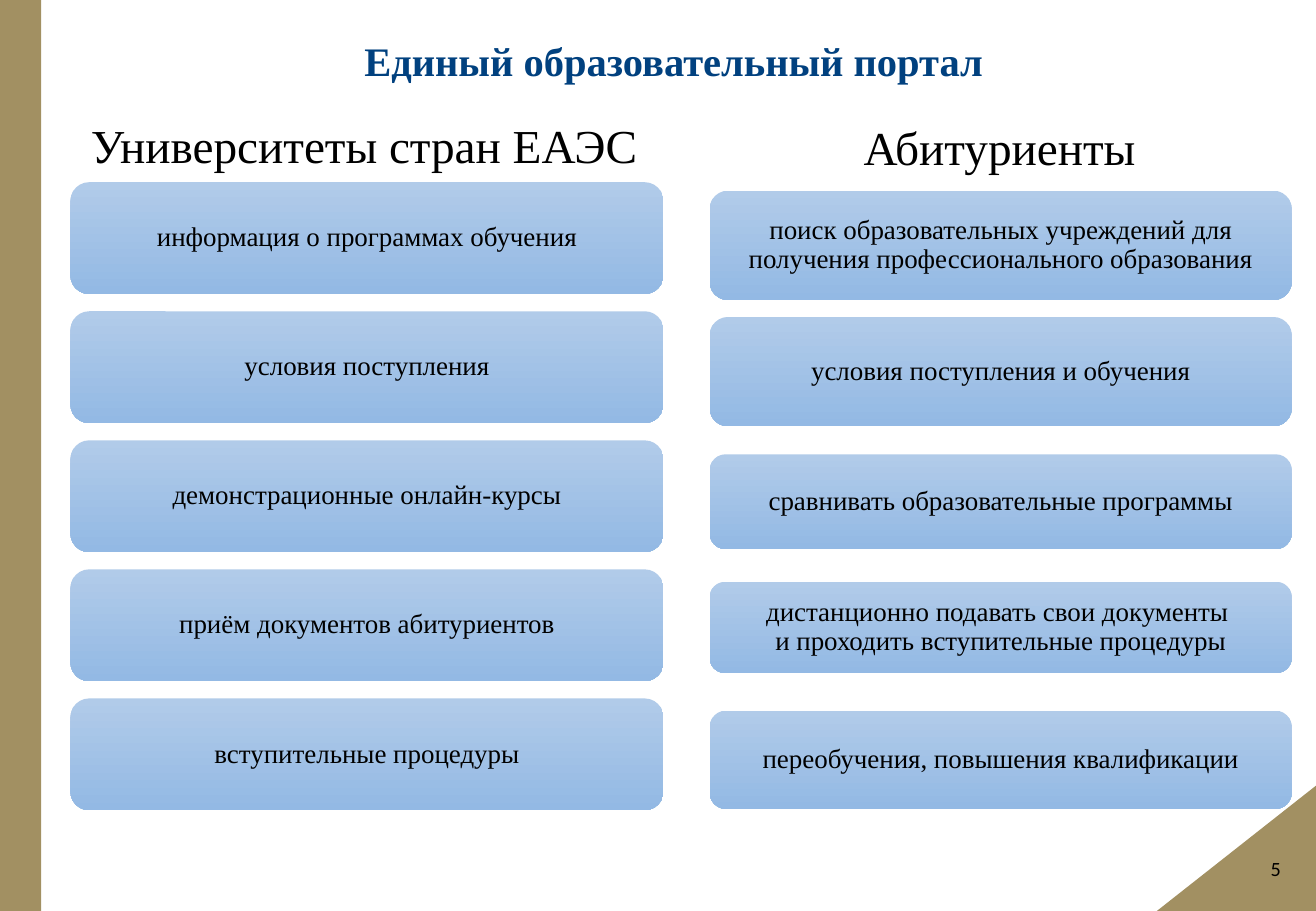
from dataclasses import dataclass

from pptx import Presentation
from pptx.dml.color import RGBColor
from pptx.enum.shapes import MSO_SHAPE
from pptx.enum.text import MSO_ANCHOR, PP_ALIGN
from pptx.util import Inches, Pt

RECT = MSO_SHAPE.RECTANGLE
ROUNDED = MSO_SHAPE.ROUNDED_RECTANGLE
TRIANGLE = MSO_SHAPE.RIGHT_TRIANGLE
MIDDLE = MSO_ANCHOR.MIDDLE
LEFT, CENTER, RIGHT = PP_ALIGN.LEFT, PP_ALIGN.CENTER, PP_ALIGN.RIGHT

TITLE = "Единый образовательный портал"
PAGE_NUMBER = "5"

UNIVERSITIES_HEADING = "Университеты стран ЕАЭС"
UNIVERSITIES = [
    "информация о программах обучения",
    "условия поступления",
    "демонстрационные онлайн-курсы",
    "приём документов абитуриентов",
    "вступительные процедуры",
]

APPLICANTS_HEADING = "Абитуриенты"
# text, top, height
APPLICANTS = [
    ("поиск образовательных учреждений для получения профессионального образования", 1.57, 0.9),
    ("условия поступления и обучения", 2.61, 0.9),
    ("сравнивать образовательные программы", 3.74, 0.78),
    ("дистанционно подавать свои документы \nи проходить вступительные процедуры", 4.79, 0.75),
    ("переобучения, повышения квалификации", 5.85, 0.81),
]


@dataclass(frozen=True)
class Theme:
    gold: RGBColor = RGBColor(0xA2, 0x90, 0x62)
    navy: RGBColor = RGBColor(0x01, 0x41, 0x7F)
    black: RGBColor = RGBColor(0, 0, 0)
    card_top: RGBColor = RGBColor(0xB1, 0xCB, 0xE9)
    card_bottom: RGBColor = RGBColor(0x93, 0xB9, 0xE4)
    serif: str = "Times New Roman"
    sans: str = "Calibri"
    title_size: int = 24
    heading_size: int = 28
    card_size: int = 16
    number_size: int = 12


THEME = Theme()


def write(frame, text, size, color=THEME.black, font=THEME.serif,
          align=CENTER, spacing=0.9, bold=False):
    """Fill a frame with one paragraph; a newline becomes a line break."""
    frame.word_wrap = True
    frame.vertical_anchor = MIDDLE
    paragraph = frame.paragraphs[0]
    paragraph.alignment = align
    paragraph.line_spacing = spacing
    for index, line in enumerate(text.split("\n")):
        if index:
            paragraph.add_line_break()
        run = paragraph.add_run()
        run.text = line
        run.font.name = font
        run.font.size = Pt(size)
        run.font.bold = bold
        run.font.color.rgb = color


def add_label(slide, box, text, size, **style):
    label = slide.shapes.add_textbox(*map(Inches, box))
    write(label.text_frame, text, size, **style)


def add_plain_shape(slide, kind, box):
    shape = slide.shapes.add_shape(kind, *map(Inches, box))
    shape.shadow.inherit = False
    shape.line.fill.background()
    return shape


def add_decoration(slide, kind, box, rotation=0):
    shape = add_plain_shape(slide, kind, box)
    shape.fill.solid()
    shape.fill.fore_color.rgb = THEME.gold
    shape.rotation = rotation


def add_card(slide, box, text):
    card = add_plain_shape(slide, ROUNDED, box)
    card.fill.gradient()
    card.fill.gradient_angle = 270
    first, last = card.fill.gradient_stops
    first.color.rgb = THEME.card_top
    last.color.rgb = THEME.card_bottom
    frame = card.text_frame
    frame.margin_left = frame.margin_right = Inches(0.07)
    frame.margin_top = frame.margin_bottom = Inches(0.07)
    write(frame, text, THEME.card_size)


def main():
    prs = Presentation()
    prs.slide_width, prs.slide_height = Inches(10.83), Inches(7.5)
    slide = prs.slides.add_slide(prs.slide_layouts[6])

    add_decoration(slide, TRIANGLE, (9.66, 6.32, 1.04, 1.32), rotation=270)
    add_decoration(slide, RECT, (0, 0, 0.34, 7.5))

    add_label(slide, (2.9, 0.23, 5.79, 0.59), TITLE, THEME.title_size,
              color=THEME.navy, align=LEFT, bold=True)
    add_label(slide, (0.6, 0.97, 4.79, 0.52), UNIVERSITIES_HEADING,
              THEME.heading_size, spacing=0.8)
    add_label(slide, (5.83, 0.99, 4.79, 0.52), APPLICANTS_HEADING,
              THEME.heading_size, spacing=0.8)

    first_top, last_top = 1.5, 5.75
    step = (last_top - first_top) / (len(UNIVERSITIES) - 1)
    for row, text in enumerate(UNIVERSITIES):
        add_card(slide, (0.58, first_top + row * step, 4.88, 0.92), text)
    for text, top, height in APPLICANTS:
        add_card(slide, (5.84, top, 4.79, height), text)

    add_label(slide, (10.18, 6.95, 0.46, 0.4), PAGE_NUMBER, THEME.number_size,
              font=THEME.sans, align=RIGHT, spacing=1.0)

    prs.save("out.pptx")


if __name__ == "__main__":
    main()
